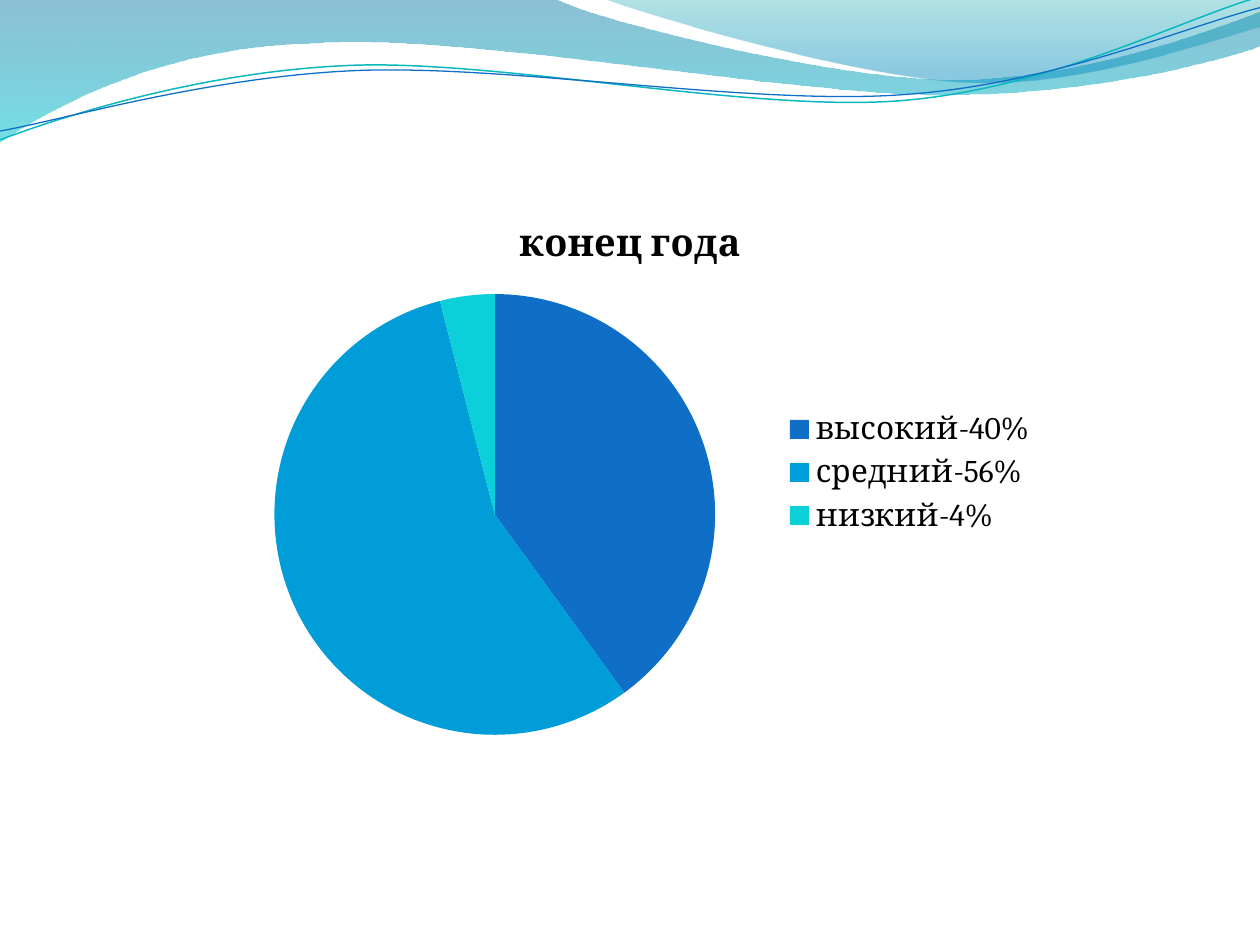
from dataclasses import dataclass
from math import cos, radians, sin

from lxml import etree
from pptx import Presentation
from pptx.chart.data import CategoryChartData
from pptx.dml.color import RGBColor
from pptx.enum.chart import XL_CHART_TYPE, XL_LEGEND_POSITION
from pptx.oxml.ns import qn
from pptx.util import Inches, Pt

PIE = XL_CHART_TYPE.PIE
RIGHT = XL_LEGEND_POSITION.RIGHT
BLANK = 6
COLUMNS = 10
FINE = 1000
TILT = 2.7
PIVOT = (4.99, 0.58)


@dataclass(frozen=True)
class Theme:
    font: str = "Cambria"
    text: str = "000000"
    body: float = 18
    title: float = 21.6
    slices: tuple = ("0F6FC6", "009DD9", "0BD0D9")
    band: tuple = ((0, "0074A1", 45), (1, "00C6CF", 55))
    veil: tuple = ((0, "00A1A9", 30), (0.8, "008BBF", 45))
    lines: tuple = (("0AB8BF", 0.85), ("0F6FC6", 0.75))


THEME = Theme()

BAND = [
    (0, 0), (4.4, -0.01),
    (4.76, 0.17, 6.64, 0.63, 7.58, 0.63),
    (8.53, 0.63, 9.58, 0.26, 10, 0.09),
    (10.01, 0.36),
    (9.83, 0.44, 8.7, 0.76, 7.46, 0.75),
    (6.22, 0.75, 3.82, 0.28, 2.57, 0.34),
    (1.29, 0.36, 0.46, 0.83, -0.01, 1.13),
    (0, 0),
]
VEIL = [
    (4.79, -0.01),
    (5.09, 0.11, 6.82, 0.62, 7.69, 0.65),
    (8.56, 0.69, 9.61, 0.32, 10, 0.21),
    (10, 0), (4.79, -0.01),
]
STRANDS = [
    [
        (0, 1.11),
        (0.48, 0.93, 1.58, 0.57, 2.77, 0.52),
        (3.95, 0.47, 5.93, 0.89, 7.13, 0.8),
        (8.33, 0.71, 9.38, 0.15, 9.98, -0.02),
    ],
    [
        (0, 1.04),
        (0.47, 0.96, 1.64, 0.61, 2.83, 0.56),
        (4.03, 0.51, 5.97, 0.84, 7.17, 0.75),
        (8.36, 0.67, 9.41, 0.21, 10, 0.06),
    ],
]


def rgb(value):
    return RGBColor.from_string(value)


def pairs(step):
    return list(zip(step[::2], step[1::2]))


def level(step):
    a = radians(TILT)
    px, py = PIVOT
    flat = []
    for x, y in pairs(step):
        dx, dy = x - px, y - py
        flat += [px + dx * cos(a) - dy * sin(a), py + dx * sin(a) + dy * cos(a)]
    return tuple(flat)


def add_curve(shapes, box, outline, close):
    left, top, width, _ = box
    points = [(x * FINE, y * FINE) for step in outline for x, y in pairs(step)]
    builder = shapes.build_freeform(*points[0], scale=width / (COLUMNS * FINE))
    builder.add_line_segments(points[1:], close=close)
    sp = builder.convert_to_shape(left, top)
    sp.shadow.inherit = False

    segments = iter(list(sp.element.iter(qn("a:lnTo"))))
    for step in outline[1:]:
        first = next(segments)
        if len(step) == 2:
            continue
        curve = etree.Element(qn("a:cubicBezTo"))
        first.addprevious(curve)
        for segment in (first, next(segments), next(segments)):
            curve.append(segment[0])
            segment.getparent().remove(segment)
    return sp


def add_veil(s, box, outline, stops):
    sp = add_curve(s.shapes, box, outline, True)
    sp.line.fill.background()
    sp.fill.gradient()
    sp.fill.gradient_angle = 270
    for stop, (position, color, _) in zip(sp.fill.gradient_stops, stops):
        stop.position = position
        stop.color.rgb = rgb(color)
    for node, (_, _, opacity) in zip(sp.element.spPr.iter(qn("a:srgbClr")), stops):
        etree.SubElement(node, qn("a:alpha"), val=str(opacity * 1000))


def add_strand(group, box, outline, color, weight):
    sp = add_curve(group.shapes, box, [level(step) for step in outline], False)
    sp.rotation = -TILT
    sp.fill.background()
    sp.line.color.rgb = rgb(color)
    sp.line.width = Pt(weight)


def add_header(s, box):
    add_veil(s, box, BAND, THEME.band)
    add_veil(s, box, VEIL, THEME.veil)
    group = s.shapes.add_group_shape()
    for outline, (color, weight) in zip(STRANDS, THEME.lines):
        add_strand(group, box, outline, color, weight)


def set_font(font, size, bold):
    font.name = THEME.font
    font.size = Pt(size)
    font.bold = bold
    font.color.rgb = rgb(THEME.text)


def add_pie(s, box, title, shares):
    data = CategoryChartData()
    data.categories = list(shares)
    data.add_series(title, list(shares.values()))
    chart = s.shapes.add_chart(PIE, *box, data).chart
    set_font(chart.font, THEME.body, False)

    chart.has_title = True
    p = chart.chart_title.text_frame.paragraphs[0]
    p.text = title
    set_font(p.font, THEME.title, True)

    chart.has_legend = True
    chart.legend.position = RIGHT
    chart.legend.include_in_layout = False

    plot = chart.plots[0]
    plot.vary_by_categories = True
    for i, color in enumerate(THEME.slices):
        fill = plot.series[0].points[i].format.fill
        fill.solid()
        fill.fore_color.rgb = rgb(color)


def main():
    prs = Presentation()
    prs.slide_width, prs.slide_height = Inches(10), Inches(7.5)
    w, h = prs.slide_width, prs.slide_height
    s = prs.slides.add_slide(prs.slide_layouts[BLANK])

    add_header(s, (0, 0, w, int(h * 0.15)))
    chart_box = (w // 6, int(h * 0.204), w * 2 // 3, int(h * 0.592))
    shares = {"высокий-40%": 40, "средний-56%": 56, "низкий-4%": 4}
    add_pie(s, chart_box, "конец года", shares)
    prs.save("out.pptx")


if __name__ == "__main__":
    main()
